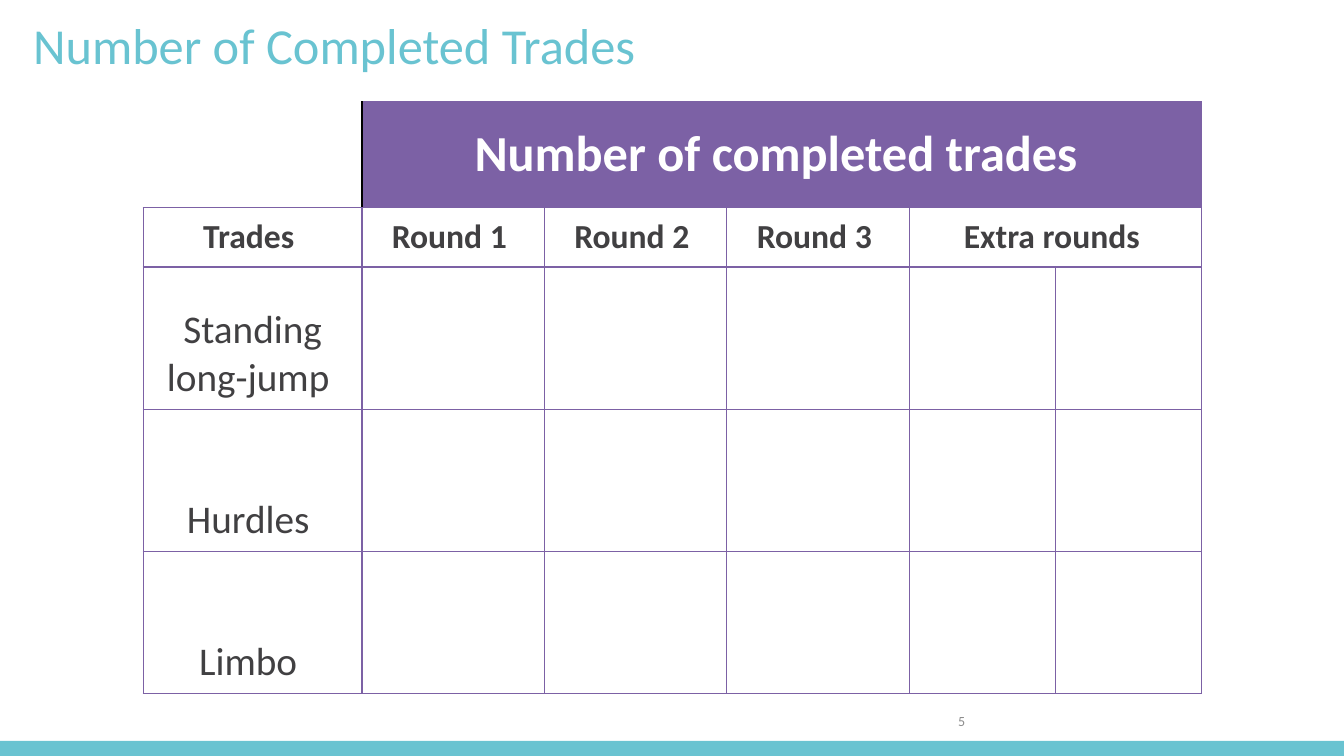
"""Build the slide with the scoring table of completed trades."""
from dataclasses import dataclass

from lxml.etree import SubElement
from pptx import Presentation
from pptx.dml.color import RGBColor
from pptx.enum.shapes import MSO_SHAPE
from pptx.enum.text import MSO_ANCHOR, PP_ALIGN
from pptx.oxml.ns import qn
from pptx.util import Inches, Pt

TEAL, PURPLE, WHITE, BLACK = "69C3D1", "7C61A5", "FFFFFF", "000000"
DARK, GREY = "414042", "8C8C8C"
COLUMN_WIDTHS = [2.17, 1.81, 1.81, 1.81, 1.45, 1.45]
ROW_HEIGHTS = [1.05, 0.59, 1.41, 1.41, 1.41]
HEADINGS = ["Trades ", "Round 1 ", "Round 2 ", "Round 3 ", "Extra rounds "]
TRADES = ["Standing long-jump ", "Hurdles ", "Limbo "]


@dataclass(frozen=True)
class TextStyle:
    size: float
    color: str
    bold: bool = False
    align: PP_ALIGN = PP_ALIGN.CENTER
    anchor: MSO_ANCHOR = MSO_ANCHOR.MIDDLE
    line_spacing: float = 1.0


@dataclass(frozen=True)
class Label:
    text: str
    left: float
    top: float
    width: float
    height: float
    style: TextStyle


BANNER = TextStyle(36, WHITE, bold=True)
HEADING = TextStyle(24, DARK, bold=True)
TRADE = TextStyle(28, DARK, anchor=MSO_ANCHOR.BOTTOM)
LABELS = [
    Label("Number of Completed Trades", 0.23, 0.15, 11.5, 0.66,
          TextStyle(36, TEAL, align=PP_ALIGN.LEFT, line_spacing=0.9)),
    Label("5", 6.67, 6.95, 3, 0.4, TextStyle(10, GREY, align=PP_ALIGN.RIGHT)),
]


def rgb(color: str) -> RGBColor:
    return RGBColor.from_string(color)


def write(frame, text: str, style: TextStyle) -> None:
    frame.text = text
    paragraph = frame.paragraphs[0]
    paragraph.alignment = style.align
    paragraph.line_spacing = style.line_spacing
    font = paragraph.runs[0].font
    font.name, font.size, font.bold = "Calibri", Pt(style.size), style.bold
    font.color.rgb = rgb(style.color)


def add_label(slide, label: Label) -> None:
    box = slide.shapes.add_textbox(Inches(label.left), Inches(label.top),
                                   Inches(label.width), Inches(label.height))
    box.text_frame.word_wrap = True
    box.text_frame.vertical_anchor = label.style.anchor
    write(box.text_frame, label.text, label.style)


def add_borders(cell, colors: dict[str, str]) -> None:
    properties = cell._tc.get_or_add_tcPr()
    for side in "LRTB":
        line = SubElement(properties, qn(f"a:ln{side}"), w=str(Pt(1)))
        if side in colors:
            fill = SubElement(line, qn("a:solidFill"))
            SubElement(fill, qn("a:srgbClr"), val=colors[side])
        else:
            SubElement(line, qn("a:noFill"))


def fill_cell(cell, text: str, style: TextStyle) -> None:
    cell.margin_left = cell.margin_right = Inches(0.15)
    cell.margin_top = cell.margin_bottom = Inches(0.07)
    cell.vertical_anchor = style.anchor
    write(cell.text_frame, text, style)


def add_trades_table(slide) -> None:
    table = slide.shapes.add_table(
        len(ROW_HEIGHTS), len(COLUMN_WIDTHS), Inches(1.42), Inches(1.01),
        Inches(sum(COLUMN_WIDTHS)), Inches(sum(ROW_HEIGHTS))).table
    table.first_row = table.horz_banding = False
    for column, width in zip(table.columns, COLUMN_WIDTHS):
        column.width = Inches(width)
    for row, height in zip(table.rows, ROW_HEIGHTS):
        row.height = Inches(height)

    corner, banner = table.cell(0, 0), table.cell(0, 1)
    grid = dict.fromkeys("LRTB", PURPLE)
    for row_index in range(len(ROW_HEIGHTS)):
        for column_index in range(len(COLUMN_WIDTHS)):
            cell = table.cell(row_index, column_index)
            if (row_index, column_index) == (0, 0):
                add_borders(cell, {"R": BLACK, "B": PURPLE})
            elif (row_index, column_index) == (0, 1):
                add_borders(cell, grid | {"L": BLACK})
            else:
                add_borders(cell, grid)
            cell.fill.solid()
            cell.fill.fore_color.rgb = rgb(WHITE if row_index else PURPLE)
    corner.fill.background()

    banner.merge(table.cell(0, 5))
    table.cell(1, 4).merge(table.cell(1, 5))
    fill_cell(banner, "Number of completed trades ", BANNER)
    for column_index, heading in enumerate(HEADINGS):
        fill_cell(table.cell(1, column_index), heading, HEADING)
    for row_index, trade in enumerate(TRADES, start=2):
        fill_cell(table.cell(row_index, 0), trade, TRADE)


def add_footer_band(slide) -> None:
    band = slide.shapes.add_shape(MSO_SHAPE.RECTANGLE, 0, Inches(7.35),
                                  Inches(13.33), Inches(0.15))
    band.shadow.inherit = False
    band.fill.solid()
    band.fill.fore_color.rgb = rgb(TEAL)
    band.line.fill.background()


def main() -> None:
    presentation = Presentation()
    presentation.slide_width = Inches(13.33)
    presentation.slide_height = Inches(7.5)
    slide = presentation.slides.add_slide(presentation.slide_layouts[6])
    add_footer_band(slide)
    add_trades_table(slide)
    for label in LABELS:
        add_label(slide, label)
    presentation.save("out.pptx")


if __name__ == "__main__":
    main()
